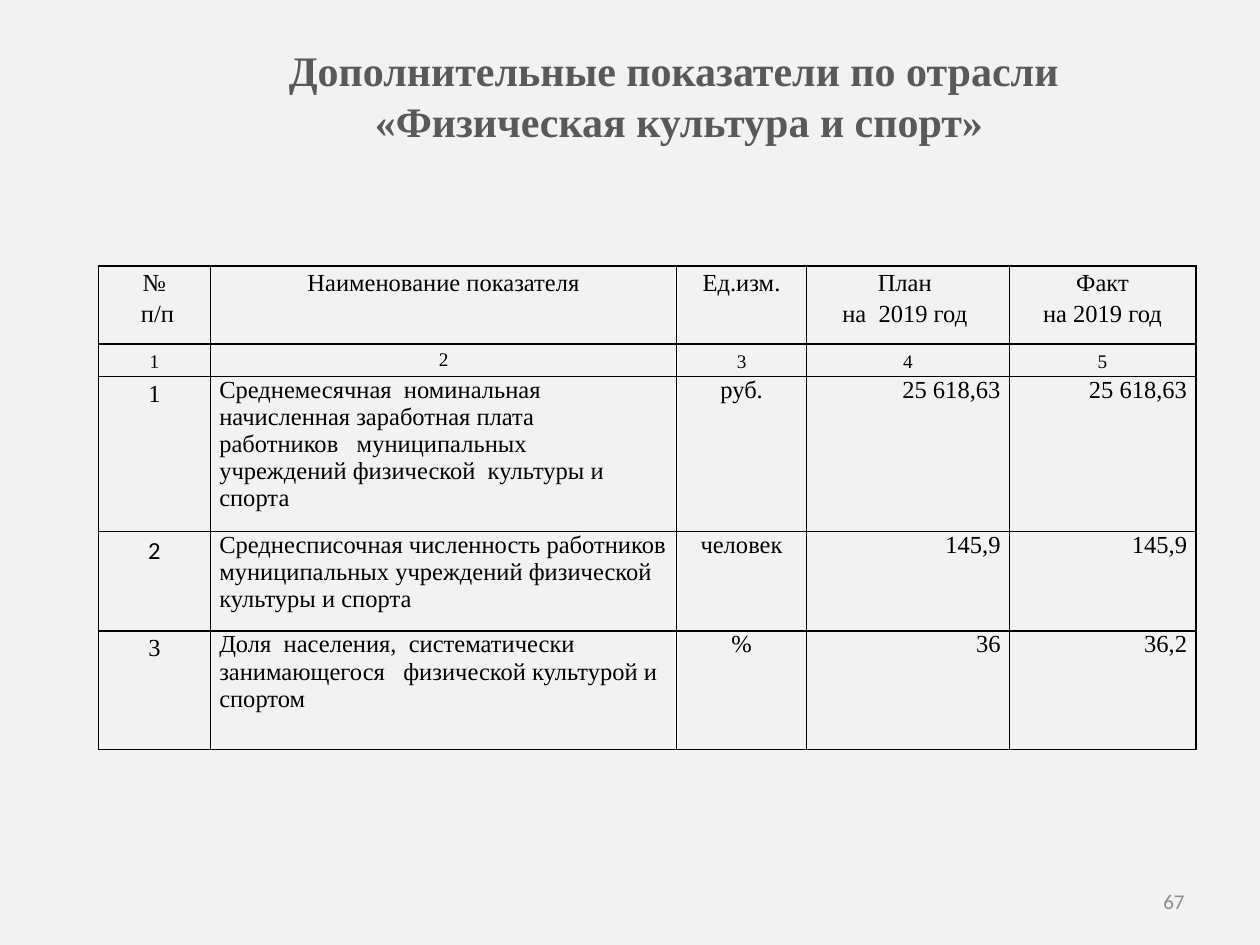
from dataclasses import dataclass
from typing import Any

from lxml import etree
from pptx import Presentation
from pptx.dml.color import RGBColor
from pptx.enum.text import MSO_ANCHOR, PP_ALIGN
from pptx.oxml.ns import qn
from pptx.util import Pt

LEFT, CENTER, RIGHT = PP_ALIGN.LEFT, PP_ALIGN.CENTER, PP_ALIGN.RIGHT
TOP, MIDDLE = MSO_ANCHOR.TOP, MSO_ANCHOR.MIDDLE
SERIF, SANS = "Times New Roman", "Calibri"

COLUMN_WIDTHS = (64.1, 266.4, 74.2, 115.9, 106.6)
ROW_HEIGHTS = (44.6, 18.7, 88.6, 56.9, 67.7)
HEADINGS = (
    ("№", " п/п"),
    ("Наименование показателя",),
    ("Ед.изм.",),
    ("План ", "на  2019 год "),
    ("Факт", "на 2019 год"),
)
INDICATORS = (
    ("1", "Среднемесячная  номинальная начисленная заработная плата    работников   "
     "муниципальных    учреждений физической  культуры и спорта",
     "руб.", "25 618,63", "25 618,63"),
    ("2", "Среднесписочная численность работников муниципальных учреждений "
     "физической культуры и спорта", "человек", "145,9", "145,9"),
    ("3", "Доля  населения,  систематически   занимающегося   физической "
     "культурой и  спортом", "%", "36", "36,2"),
)
INDICATOR_ALIGNS = (CENTER, LEFT, CENTER, RIGHT, RIGHT)


def color(value):
    return RGBColor.from_string(value)


@dataclass
class SlideBuilder:
    """Draws text and tables on the current slide in one style."""

    page: Any
    ink: str = "000000"
    border_width: float = 1

    def background(self, fill):
        self.page.background.fill.solid()
        self.page.background.fill.fore_color.rgb = color(fill)

    def add_lines(self, frame, lines, size, align, font=SERIF, ink=None,
                  bold=False, spacing=1.0):
        frame.word_wrap = True
        for index, line in enumerate(lines):
            para = frame.add_paragraph() if index else frame.paragraphs[0]
            para.alignment = align
            para.line_spacing = spacing
            span = para.add_run()
            span.text = line
            span.font.name = font
            span.font.size = Pt(size)
            span.font.bold = bold
            span.font.color.rgb = color(ink or self.ink)

    def text(self, left, top, width, height, lines, size, align, **style):
        box = self.page.shapes.add_textbox(Pt(left), Pt(top), Pt(width), Pt(height))
        box.text_frame.vertical_anchor = MIDDLE
        self.add_lines(box.text_frame, lines, size, align, **style)

    def table(self, left, top, widths, heights):
        frame = self.page.shapes.add_table(
            len(heights), len(widths), Pt(left), Pt(top),
            Pt(sum(widths)), Pt(sum(heights)))
        table = frame.table
        table.first_row = table.horz_banding = False
        for column, width in zip(table.columns, widths):
            column.width = Pt(width)
        for row, height in zip(table.rows, heights):
            row.height = Pt(height)
        return table

    def cell(self, cell, lines, size, align, anchor=TOP, inset=5, **style):
        cell.margin_left = cell.margin_right = Pt(inset)
        cell.margin_top = cell.margin_bottom = 0
        cell.vertical_anchor = anchor
        self.borders(cell)
        cell.fill.background()
        self.add_lines(cell.text_frame, lines, size, align, **style)

    def borders(self, cell):
        properties = cell._tc.get_or_add_tcPr()
        for side in ("a:lnL", "a:lnR", "a:lnT", "a:lnB"):
            line = etree.SubElement(properties, qn(side), w=str(Pt(self.border_width)))
            fill = etree.SubElement(line, qn("a:solidFill"))
            etree.SubElement(fill, qn("a:srgbClr"), val=self.ink)


def main():
    deck = Presentation()
    deck.slide_width, deck.slide_height = Pt(720), Pt(540)
    builder = SlideBuilder(deck.slides.add_slide(deck.slide_layouts[6]))
    builder.background("F2F2F2")
    builder.text(516, 500.5, 168, 28.8, ["67"], 12, RIGHT, font=SANS, ink="8C8C8C")

    table = builder.table(56.2, 151.9, COLUMN_WIDTHS, ROW_HEIGHTS)
    for column, lines in enumerate(HEADINGS):
        builder.cell(table.cell(0, column), lines, 14, CENTER, inset=4.3, spacing=1.15)
        builder.cell(table.cell(1, column), [str(column + 1)], 11, CENTER, MIDDLE,
                     inset=4.3, spacing=1.0 if column == 1 else 1.15)
    for row, values in enumerate(INDICATORS, 2):
        for column, (value, align) in enumerate(zip(values, INDICATOR_ALIGNS)):
            builder.cell(table.cell(row, column), [value], 14, align,
                         font=SANS if (row, column) == (3, 0) else SERIF,
                         spacing=1.0 if column else 1.15)

    builder.text(82, 31.7, 612, 45.4,
                 ["Дополнительные показатели по отрасли ", "«Физическая культура и спорт»"],
                 24, CENTER, ink="595959", bold=True)
    deck.save("out.pptx")


if __name__ == "__main__":
    main()
